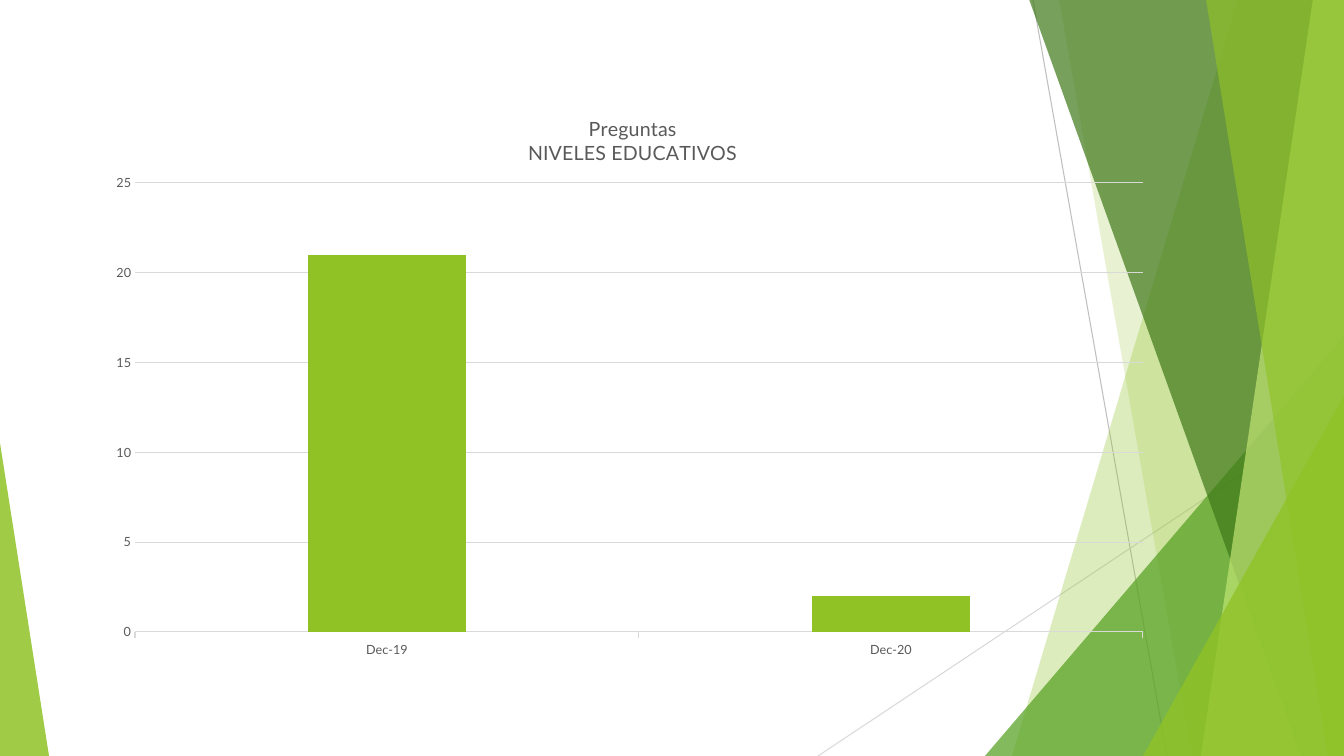
from dataclasses import dataclass

from lxml import etree
from pptx import Presentation
from pptx.chart.data import CategoryChartData
from pptx.dml.color import RGBColor
from pptx.enum.chart import XL_CHART_TYPE, XL_TICK_MARK
from pptx.enum.shapes import MSO_CONNECTOR, MSO_SHAPE
from pptx.oxml import parse_xml
from pptx.oxml.ns import nsdecls, qn
from pptx.util import Pt

COLUMNS = XL_CHART_TYPE.COLUMN_CLUSTERED
TICK_NONE = XL_TICK_MARK.NONE
TICK_OUTSIDE = XL_TICK_MARK.OUTSIDE
STRAIGHT = MSO_CONNECTOR.STRAIGHT
TRIANGLE = MSO_SHAPE.ISOSCELES_TRIANGLE

PX = 914400 / 100.8
WIDTH, HEIGHT = 1344, 756
BLANK_LAYOUT = 6
CHART_BOX = (95, 89, 1069, 580)
PLOT_BOX = (135, 183, 1008, 449)
TITLE_CORNER = (525, 111)


@dataclass(frozen=True)
class Theme:
    """Colours, font and type sizes of the slide."""

    lime: str = "90C226"
    green: str = "54A021"
    forest: str = "3F7819"
    pale: str = "C0E474"
    text: str = "595959"
    rule: str = "D9D9D9"
    dark_rule: str = "BFBFBF"
    font: str = "Lato"
    title_size: int = 14
    label_size: int = 9
    rule_width: float = 0.75


THEME = Theme()


def emu(px):
    """Turn px into EMU."""
    return round(px * PX)


def style_line(line, color):
    """Give a line its colour and the common width."""
    line.color.rgb = RGBColor.from_string(color)
    line.width = Pt(THEME.rule_width)


def style_font(font, size):
    """Give a font the common face and colour."""
    font.name = THEME.font
    font.size = Pt(size)
    font.bold = False
    font.color.rgb = RGBColor.from_string(THEME.text)


def paint(shape, color, opacity):
    """Fill a shape with a translucent colour and no outline."""
    shape.shadow.inherit = False
    shape.line.fill.background()
    shape.fill.solid()
    shape.fill.fore_color.rgb = RGBColor.from_string(color)
    color_element = shape.fill._xPr.find(".//" + qn("a:srgbClr"))
    etree.SubElement(color_element, qn("a:alpha"), val=str(opacity * 1000))


def add_rule(slide, start, end, color):
    """Draw a thin straight line."""
    connector = slide.shapes.add_connector(STRAIGHT, *map(emu, start + end))
    style_line(connector.line, color)
    etree.SubElement(connector._element.spPr, qn("a:effectLst"))


def add_band(slide, top_left, top_right, bottom_left, color, opacity):
    """Draw a slanted band that reaches the right edge of the slide."""
    builder = slide.shapes.build_freeform(top_left, -1, scale=PX)
    corners = [(top_right, -1), (WIDTH, HEIGHT), (bottom_left, HEIGHT)]
    builder.add_line_segments(corners, close=True)
    paint(builder.convert_to_shape(), color, opacity)


def add_corner(slide, left, top, width, apex, color, opacity):
    """Draw a right triangle standing on the bottom edge."""
    box = (left, top, width, HEIGHT - top)
    shape = slide.shapes.add_shape(TRIANGLE, *map(emu, box))
    shape.adjustments[0] = apex
    paint(shape, color, opacity)


def add_layout(parent, left, top, size=None):
    """Place a chart part by px, as fractions of the chart frame."""
    chart_left, chart_top, chart_width, chart_height = CHART_BOX
    values = {"xMode": "edge", "yMode": "edge",
              "x": (left - chart_left) / chart_width,
              "y": (top - chart_top) / chart_height}
    if size:
        values = {"layoutTarget": "inner", **values,
                  "w": size[0] / chart_width, "h": size[1] / chart_height}
    layout = parse_xml(f"<c:layout {nsdecls('c')}><c:manualLayout/></c:layout>")
    for name, value in values.items():
        etree.SubElement(layout[0], qn(f"c:{name}"), val=str(value))
    for old in parent.findall(qn("c:layout")):
        parent.remove(old)
    text = parent.find(qn("c:tx"))
    if text is None:
        parent.insert(0, layout)
    else:
        text.addnext(layout)


def add_title(chart, lines):
    """Write the chart title, one paragraph a line."""
    title = chart.chart_title
    frame = title.text_frame
    for index, line in enumerate(lines):
        paragraph = frame.add_paragraph() if index else frame.paragraphs[0]
        run = paragraph.add_run()
        run.text = line
        style_font(run.font, THEME.title_size)
    title.include_in_layout = False
    add_layout(title._element, *TITLE_CORNER)


def style_axes(chart):
    """Format both axes and the gridlines."""
    for axis in (chart.category_axis, chart.value_axis):
        style_font(axis.tick_labels.font, THEME.label_size)
        axis.major_tick_mark = axis.minor_tick_mark = TICK_NONE
    chart.category_axis.major_tick_mark = TICK_OUTSIDE
    style_line(chart.category_axis.format.line, THEME.rule)
    values = chart.value_axis
    values.minimum_scale, values.maximum_scale, values.major_unit = 0, 25, 5
    values.format.line.fill.background()
    style_line(values.major_gridlines.format.line, THEME.rule)


def add_column_chart(slide, title_lines, categories, values):
    """Add the column chart with its title."""
    data = CategoryChartData()
    data.categories = categories
    data.add_series("Series 1", values)
    box = map(emu, CHART_BOX)
    chart = slide.shapes.add_chart(COLUMNS, *box, data).chart
    chart.has_legend = False
    chart.font.name = THEME.font
    plot = chart.plots[0]
    plot.gap_width, plot.overlap, plot.vary_by_categories = 219, -27, False
    fill = plot.series[0].format.fill
    fill.solid()
    fill.fore_color.rgb = RGBColor.from_string(THEME.lime)
    style_axes(chart)
    add_title(chart, title_lines)
    left, top, *size = PLOT_BOX
    add_layout(chart._chartSpace.chart.plotArea, left, top, size)


def add_decoration(slide):
    """Draw the green facets from back to front."""
    add_rule(slide, (1033, 0), (1167, HEIGHT), THEME.dark_rule)
    add_rule(slide, (WIDTH, 406), (818, HEIGHT), THEME.rule)
    add_band(slide, 1238, WIDTH, 1012, THEME.lime, 30)
    add_band(slide, 1059, WIDTH, 1192, THEME.lime, 20)
    add_corner(slide, 985, 336, 359, 1, THEME.green, 72)
    add_band(slide, 1029, WIDTH, 1301, THEME.forest, 70)
    add_band(slide, 1313, WIDTH, 1201, THEME.pale, 70)
    add_band(slide, 1206, WIDTH, 1328, THEME.lime, 65)
    add_corner(slide, 1143, 396, 201, 1, THEME.lime, 80)
    add_corner(slide, 0, 443, 49, 0, THEME.lime, 85)


def main():
    """Build and save the slide."""
    presentation = Presentation()
    presentation.slide_width = emu(WIDTH)
    presentation.slide_height = emu(HEIGHT)
    layout = presentation.slide_layouts[BLANK_LAYOUT]
    slide = presentation.slides.add_slide(layout)
    add_decoration(slide)
    add_column_chart(slide, ["Preguntas", "NIVELES EDUCATIVOS"],
                     ["Dec-19", "Dec-20"], [21, 2])
    presentation.save("out.pptx")


if __name__ == "__main__":
    main()
